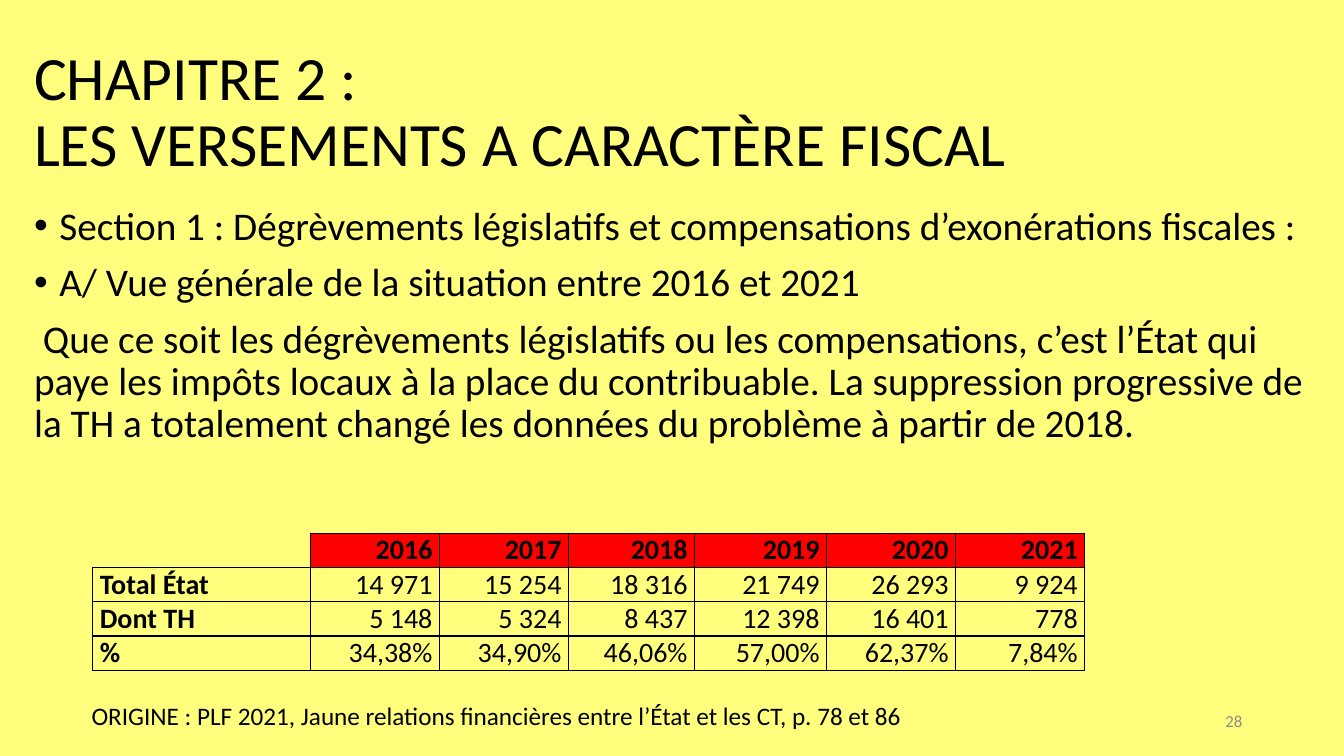
from lxml import etree
from pptx import Presentation
from pptx.dml.color import RGBColor
from pptx.enum.text import MSO_ANCHOR, PP_ALIGN
from pptx.oxml.ns import qn
from pptx.util import Inches, Pt

LEFT, RIGHT = PP_ALIGN.LEFT, PP_ALIGN.RIGHT
TOP, MIDDLE = MSO_ANCHOR.TOP, MSO_ANCHOR.MIDDLE

PALE_YELLOW = RGBColor(0xFF, 0xFF, 0x7D)
BLACK = RGBColor(0, 0, 0)
RED = RGBColor(0xFF, 0, 0)
GREY = RGBColor(0x8C, 0x8C, 0x8C)

TITLE = "CHAPITRE 2 : \vLES VERSEMENTS A CARACTÈRE FISCAL"
SECTIONS = [
    "Section 1 : Dégrèvements législatifs et compensations d’exonérations fiscales :",
    "A/ Vue générale de la situation entre 2016 et 2021",
]
EXPLANATION = (
    " Que ce soit les dégrèvements législatifs ou les compensations, c’est l’État qui "
    "paye les impôts locaux à la place du contribuable. La suppression progressive de "
    "la TH a totalement changé les données du problème à partir de 2018."
)
SOURCE = "ORIGINE : PLF 2021, Jaune relations financières entre l’État et les CT, p. 78 et 86"

COLUMN_WIDTHS = [2.16, 1.28, 1.28, 1.25, 1.31, 1.28, 1.28]
ROW_HEIGHT = 0.34
FIGURES = [
    ["", "2016", "2017", "2018", "2019", "2020", "2021"],
    ["Total État", "14 971", "15 254", "18 316", "21 749", "26 293", "9 924"],
    ["Dont TH", "5 148", "5 324", "8 437", "12 398", "16 401", "778"],
    ["%", "34,38%", "34,90%", "46,06%", "57,00%", "62,37%", "7,84%"],
]


def style_paragraph(paragraph, size, color=BLACK, bold=False, align=LEFT):
    paragraph.alignment = align
    for run in paragraph.runs:
        run.font.name = "Calibri"
        run.font.size = Pt(size)
        run.font.bold = bold
        run.font.color.rgb = color


def add_text(slide, box, paragraphs, size, color=BLACK, align=LEFT, anchor=TOP, wrap=True):
    frame = slide.shapes.add_textbox(*map(Inches, box)).text_frame
    frame.word_wrap = wrap
    frame.vertical_anchor = anchor
    frame.text = "\n".join(paragraphs)
    for paragraph in frame.paragraphs:
        style_paragraph(paragraph, size, color, align=align)
    return frame


def add_bullet(paragraph):
    properties = paragraph._p.get_or_add_pPr()
    properties.set("marL", str(Inches(0.25)))
    properties.set("indent", str(Inches(-0.25)))
    etree.SubElement(properties, qn("a:buFont"), typeface="Arial")
    etree.SubElement(properties, qn("a:buChar"), char="•")


def add_body(slide):
    frame = add_text(slide, (0.24, 2, 12.95, 2.6), SECTIONS + [EXPLANATION], 28)
    for paragraph in frame.paragraphs:
        paragraph.line_spacing = 0.9
        paragraph.space_before = Pt(10)
    for paragraph in frame.paragraphs[:len(SECTIONS)]:
        add_bullet(paragraph)


def set_borders(cell, drawn_sides):
    properties = cell._tc.get_or_add_tcPr()
    for side in "LRTB":
        line = etree.SubElement(properties, qn(f"a:ln{side}"), w=str(Pt(1)))
        if side in drawn_sides:
            fill = etree.SubElement(line, qn("a:solidFill"))
            etree.SubElement(fill, qn("a:srgbClr"), val=str(BLACK))
        else:
            etree.SubElement(line, qn("a:noFill"))


def fill_cell(cell, text, is_header, is_label):
    is_corner = is_header and is_label
    set_borders(cell, "RB" if is_corner else "LRTB")
    if is_header and not is_label:
        cell.fill.solid()
        cell.fill.fore_color.rgb = RED
    else:
        cell.fill.background()
    cell.margin_left = cell.margin_right = Inches(0.07)
    cell.margin_top = cell.margin_bottom = 0
    cell.text = text
    style_paragraph(cell.text_frame.paragraphs[0], 20, bold=is_header or is_label,
                    align=LEFT if is_label else RIGHT)


def add_figures_table(slide):
    table = slide.shapes.add_table(
        len(FIGURES), len(COLUMN_WIDTHS), Inches(0.92), Inches(5.29),
        Inches(sum(COLUMN_WIDTHS)), Inches(ROW_HEIGHT * len(FIGURES))).table
    table.first_row = table.horz_banding = False
    for column, width in zip(table.columns, COLUMN_WIDTHS):
        column.width = Inches(width)
    for r, values in enumerate(FIGURES):
        for c, value in enumerate(values):
            fill_cell(table.cell(r, c), value, r == 0, c == 0)


def main():
    presentation = Presentation()
    presentation.slide_width = Inches(13.33)
    presentation.slide_height = Inches(7.5)
    slide = presentation.slides.add_slide(presentation.slide_layouts[6])
    slide.background.fill.solid()
    slide.background.fill.fore_color.rgb = PALE_YELLOW

    title = add_text(slide, (0.24, 0.4, 12.7, 1.45), [TITLE], 44, anchor=MIDDLE)
    title.paragraphs[0].line_spacing = 0.9
    add_body(slide)
    add_figures_table(slide)
    add_text(slide, (0.81, 6.9, 8.52, 0.4), [SOURCE], 18, wrap=False)
    add_text(slide, (9.42, 6.95, 3, 0.4), ["28"], 12, GREY, RIGHT, MIDDLE)
    presentation.save("out.pptx")


if __name__ == "__main__":
    main()
